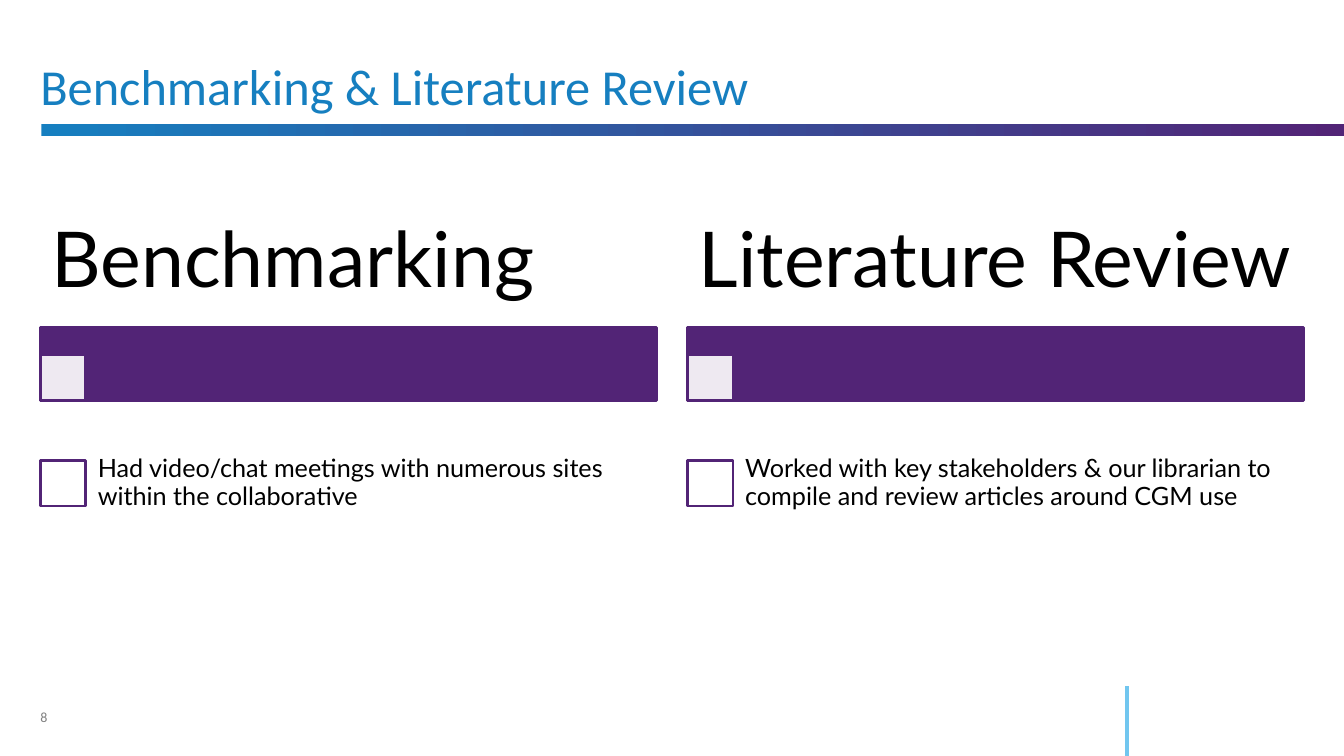
from lxml.etree import SubElement
from pptx import Presentation
from pptx.dml.color import RGBColor as RGB
from pptx.enum.shapes import MSO_CONNECTOR as CONNECTOR, MSO_SHAPE as SHAPE
from pptx.enum.text import MSO_ANCHOR as ANCHOR, MSO_AUTO_SIZE as AUTO_SIZE, PP_ALIGN as ALIGN
from pptx.oxml.ns import qn
from pptx.util import Inches, Pt

COLORS = {
    "blue": "167FC0",
    "purple": "522476",
    "sky": "71C6EF",
    "white": "FFFFFF",
    "black": "000000",
    "gray": "808080",
}


def color(name):
    return RGB.from_string(COLORS[name])


class ReviewSlide:
    """Holds the slide and draws its elements in one style."""

    def __init__(self, deck):
        self.slide = deck.slides.add_slide(deck.slide_layouts[5])
        self.shapes = self.slide.shapes

    def fill_text(self, holder, text, size, font, ink, anchor, insets=(0, 0), spacing=None):
        frame = holder.text_frame
        frame.text = text
        frame.word_wrap = True
        frame.auto_size = AUTO_SIZE.NONE
        frame.vertical_anchor = anchor
        frame.margin_left = frame.margin_right = Inches(insets[0])
        frame.margin_top = frame.margin_bottom = Inches(insets[1])
        paragraph = frame.paragraphs[0]
        paragraph.alignment = ALIGN.LEFT
        if spacing:
            paragraph.line_spacing = spacing
        run_font = paragraph.runs[0].font
        run_font.name, run_font.size = font, Pt(size)
        run_font.color.rgb = color(ink)

    def title(self, text):
        heading = self.shapes.title
        heading.left, heading.top = Inches(0.4), Inches(0)
        heading.width, heading.height = Inches(9.83), Inches(1.15)
        self.fill_text(heading, text, 36, "Calibri", "blue", ANCHOR.BOTTOM, spacing=0.85)

    def text(self, box, *style, **options):
        label = self.shapes.add_textbox(*map(Inches, box))
        self.fill_text(label, *style, **options)

    def rectangle(self, box):
        rectangle = self.shapes.add_shape(SHAPE.RECTANGLE, *map(Inches, box))
        rectangle.shadow.inherit = False
        return rectangle

    def gradient_bar(self, box, start, end):
        bar = self.rectangle(box)
        bar.line.fill.background()
        bar.fill.gradient()
        bar.fill.gradient_angle = 0
        for stop, name in zip(bar.fill.gradient_stops, (start, end)):
            stop.color.rgb = color(name)

    def outlined(self, box, fill, opacity=None):
        block = self.rectangle(box)
        block.fill.solid()
        block.fill.fore_color.rgb = color(fill)
        block.line.color.rgb = color("purple")
        block.line.width = Pt(2)
        if opacity:
            solid = block._element.spPr.find(qn("a:solidFill"))
            SubElement(solid[0], qn("a:alpha")).set("val", str(opacity * 1000))

    def rule(self, start, end, ink, width):
        rule = self.shapes.add_connector(CONNECTOR.STRAIGHT, *map(Inches, start + end))
        rule.line.color.rgb = color(ink)
        rule.line.width = Pt(width)
        SubElement(rule._element.spPr, qn("a:effectLst"))

    def topic(self, left, heading, finding):
        width, square = 6.11, 0.45
        self.outlined((left, 3.25, width, 0.72), "purple")
        self.outlined((left, 3.52, square, square), "white", opacity=90)
        self.text((left, 1.96, width, 1.29), heading, 55, "Lato", "black",
                  ANCHOR.MIDDLE, insets=(0.11, 0.08), spacing=0.9)
        self.outlined((left, 4.57, square, square), "white")
        self.text((left + 0.43, 4.27, width - 0.43, 1.05), finding, 18, "Lato", "black",
                  ANCHOR.MIDDLE, insets=(0.14, 0.14), spacing=0.9)


def main():
    deck = Presentation()
    deck.slide_width, deck.slide_height = Inches(13.33), Inches(7.5)
    review = ReviewSlide(deck)
    review.gradient_bar((0.41, 1.23, 12.92, 0.12), "blue", "purple")
    review.rule((11.18, 6.81), (11.18, 7.5), "sky", 3)
    review.title("Benchmarking & Literature Review")
    topics = [
        ("Benchmarking",
         "Had video/chat meetings with numerous sites within the collaborative"),
        ("Literature Review",
         "Worked with key stakeholders & our librarian to compile and review "
         "articles around CGM use"),
    ]
    for column, (heading, finding) in enumerate(topics):
        review.topic(0.4 + column * 6.42, heading, finding)
    review.text((0.4, 7.03, 0.6, 0.17), "8", 10, "Calibri", "gray", ANCHOR.BOTTOM)
    deck.save("out.pptx")


if __name__ == "__main__":
    main()
